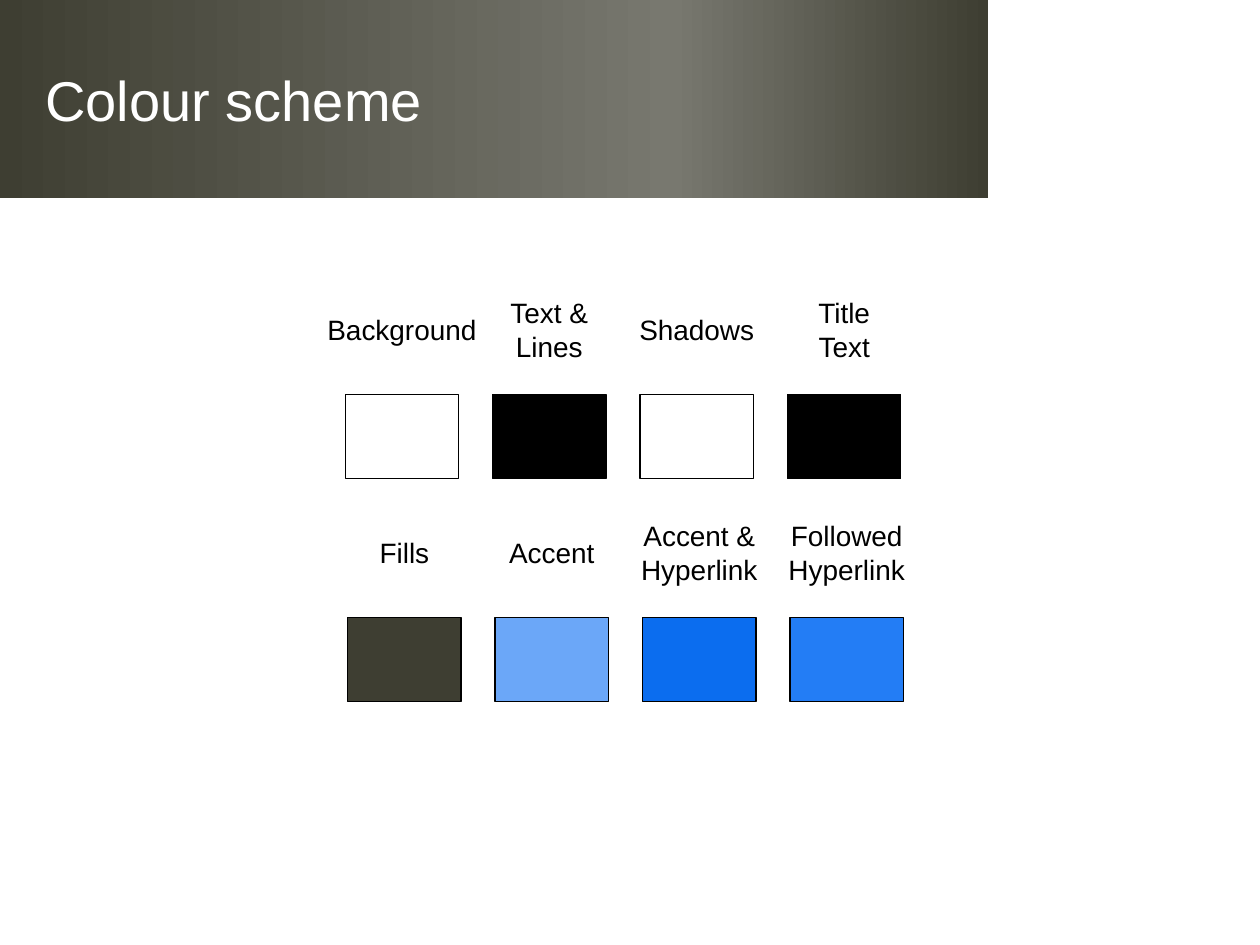
"""Build the colour scheme slide: a title band over two rows of labelled swatches."""
import copy

import pptx
import pptx.dml.color
import pptx.enum.shapes
import pptx.enum.text
import pptx.oxml.ns
import pptx.util

Inches = pptx.util.Inches
RGB = pptx.dml.color.RGBColor.from_string

THEME = {
    "font": "Arial", "title_size": 32, "label_size": 16,
    "title": "FFFFFF", "text": "000000", "line": "000000",
    "band": [(0, "3E3E32"), (0.68, "78786F"), (1, "3E3E32")],
}
TITLE = "Colour scheme"
SWATCH_ROWS = [
    {"left": 2.74, "top": 3.13, "swatches": [
        ("Background", 1.41, "FFFFFF"), ("Text &\nLines", 0.86, "000000"),
        ("Shadows", 1.13, "FFFFFF"), ("Title\vText", 0.65, "000000")]},
    {"left": 2.76, "top": 4.9, "swatches": [
        ("Fills", 0.62, "3E3E32"), ("Accent", 0.9, "6BA7F8"),
        ("Accent &\nHyperlink", 1.15, "0B6DEF"),
        ("Followed\nHyperlink", 1.15, "237DF5")]},
]
SWATCH_WIDTH, SWATCH_HEIGHT, SWATCH_PITCH = 0.9, 0.67, 1.17
LABEL_RISE, LABEL_PADDING, LINE_HEIGHT = 0.51, 0.1, 0.27


def style_text(frame, size, color, align):
    for paragraph in frame.paragraphs:
        paragraph.alignment = align
        paragraph.font.name = THEME["font"]
        paragraph.font.size = pptx.util.Pt(size)
        paragraph.font.color.rgb = RGB(color)


def add_rectangle(slide, left, top, width, height):
    rectangle = slide.shapes.add_shape(
        pptx.enum.shapes.MSO_SHAPE.RECTANGLE,
        Inches(left), Inches(top), Inches(width), Inches(height))
    rectangle.shadow.inherit = False
    return rectangle


def add_band(slide):
    band = add_rectangle(slide, 0, 0, 7.84, 1.57)
    band.line.fill.background()
    band.fill.gradient()
    band.fill.gradient_angle = 0
    stop_list = next(band._element.iter(pptx.oxml.ns.qn("a:gsLst")))
    stop_list.insert(1, copy.deepcopy(stop_list[0]))
    for stop, (position, color) in zip(band.fill.gradient_stops, THEME["band"]):
        stop.position = position
        stop.color.rgb = RGB(color)
    slide.shapes._spTree.insert(2, band._element)


def add_title(slide):
    title = slide.shapes.title
    title.left, title.top = Inches(0.26), Inches(0.16)
    title.width, title.height = Inches(7.09), Inches(1.25)
    title.text_frame.text = TITLE
    title.text_frame.vertical_anchor = pptx.enum.text.MSO_ANCHOR.MIDDLE
    style_text(title.text_frame, THEME["title_size"], THEME["title"],
               pptx.enum.text.PP_ALIGN.LEFT)


def add_swatch(slide, left, top, color):
    swatch = add_rectangle(slide, left, top, SWATCH_WIDTH, SWATCH_HEIGHT)
    swatch.fill.solid()
    swatch.fill.fore_color.rgb = RGB(color)
    swatch.line.color.rgb = RGB(THEME["line"])
    swatch.line.width = pptx.util.Pt(0.75)


def add_label(slide, center_x, center_y, width, text):
    height = LABEL_PADDING + LINE_HEIGHT * len(text.splitlines())
    label = slide.shapes.add_textbox(
        Inches(center_x - width / 2), Inches(center_y - height / 2),
        Inches(width), Inches(height))
    frame = label.text_frame
    frame.word_wrap = False
    frame.auto_size = pptx.enum.text.MSO_AUTO_SIZE.SHAPE_TO_FIT_TEXT
    frame.text = text
    style_text(frame, THEME["label_size"], THEME["text"],
               pptx.enum.text.PP_ALIGN.CENTER)


def main():
    deck = pptx.Presentation()
    deck.slide_width, deck.slide_height = Inches(10), Inches(7.5)
    slide = deck.slides.add_slide(deck.slide_layouts.get_by_name("Title Only"))
    add_band(slide)
    add_title(slide)
    for row in SWATCH_ROWS:
        for column, (text, width, color) in enumerate(row["swatches"]):
            left = row["left"] + column * SWATCH_PITCH
            add_swatch(slide, left, row["top"], color)
            add_label(slide, left + SWATCH_WIDTH / 2, row["top"] - LABEL_RISE,
                      width, text)
    deck.save("out.pptx")


if __name__ == "__main__":
    main()
